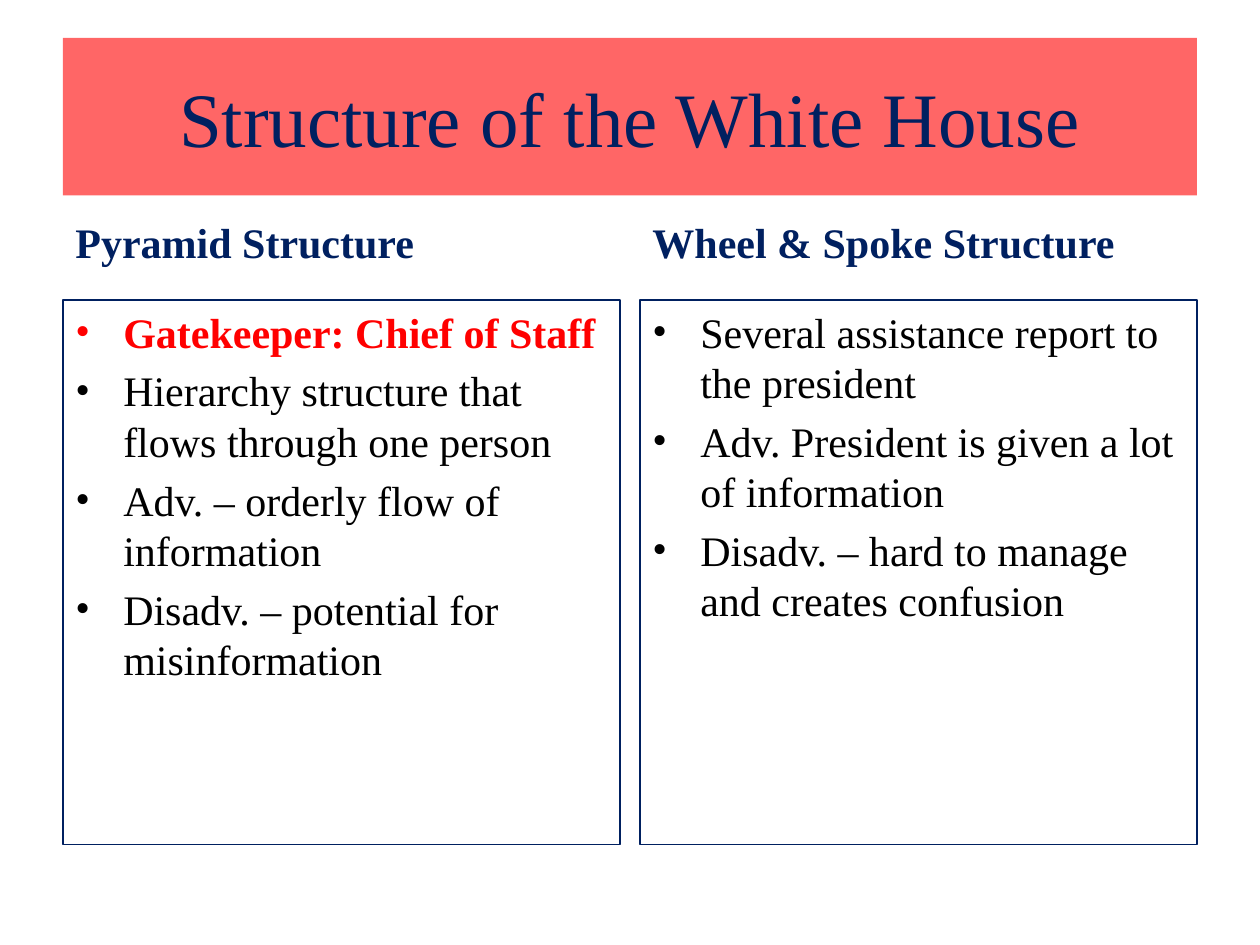
from lxml.etree import SubElement
from pptx import Presentation
from pptx.dml.color import RGBColor
from pptx.enum.shapes import MSO_SHAPE
from pptx.enum.text import MSO_ANCHOR, PP_ALIGN
from pptx.oxml.ns import qn
from pptx.util import Inches, Pt

FONT = "Times New Roman"
NAVY, RED, BLACK, WHITE = "002060", "FF0000", "000000", "FFFFFF"
MARGIN, GUTTER = 0.5, 0.16
HEADING = {"size": Pt(24), "bold": True, "color": NAVY}
POINT = {"size": Pt(24), "bold": False, "color": BLACK}
KEY_POINT = POINT | {"bold": True, "color": RED}

COLUMNS = [
    ("Pyramid Structure", [
        ("Gatekeeper: Chief of Staff", KEY_POINT),
        ("Hierarchy structure that flows through one person", POINT),
        ("Adv. – orderly flow of information", POINT),
        ("Disadv. – potential for misinformation", POINT),
    ]),
    ("Wheel & Spoke Structure", [
        ("Several assistance report to the president", POINT),
        ("Adv. President is given a lot of information", POINT),
        ("Disadv. – hard to manage and creates confusion", POINT),
    ]),
]


def rgb(value):
    return RGBColor.from_string(value)


def add_panel(slide, box, fill, anchor, border=None):
    panel = slide.shapes.add_shape(MSO_SHAPE.RECTANGLE, *map(Inches, box))
    panel.shadow.inherit = False
    panel.fill.solid()
    panel.fill.fore_color.rgb = rgb(fill)
    if border:
        panel.line.color.rgb = rgb(border)
        panel.line.width = Pt(0.75)
    else:
        panel.line.fill.background()
    panel.text_frame.word_wrap = True
    panel.text_frame.vertical_anchor = anchor
    return panel


def add_bullet(paragraph):
    properties = paragraph._p.get_or_add_pPr()
    properties.set("marL", str(Inches(0.38)))
    properties.set("indent", str(-Inches(0.38)))
    SubElement(properties, qn("a:buFont"), typeface=FONT)
    SubElement(properties, qn("a:buChar"), char="•")


def write(paragraph, text, style, align=PP_ALIGN.LEFT):
    paragraph.alignment = align
    run = paragraph.add_run()
    run.text = text
    run.font.name = FONT
    for name, value in style.items():
        if name == "color":
            run.font.color.rgb = rgb(value)
        else:
            setattr(run.font, name, value)


def add_title(slide, box, text):
    banner = add_panel(slide, box, RED, MSO_ANCHOR.MIDDLE)
    color = banner.fill._xPr.find(qn("a:solidFill")).find(qn("a:srgbClr"))
    SubElement(color, qn("a:alpha"), val="60000")
    write(banner.text_frame.paragraphs[0], text,
          {"size": Pt(44), "color": NAVY}, PP_ALIGN.CENTER)


def add_column(slide, box, heading, points):
    left, top, width, height = box
    heading_height, body_offset = 0.49, 0.7
    label = add_panel(slide, (left, top, width, heading_height), WHITE, MSO_ANCHOR.BOTTOM)
    write(label.text_frame.paragraphs[0], heading, HEADING)

    body_box = (left, top + body_offset, width, height - body_offset)
    frame = add_panel(slide, body_box, WHITE, MSO_ANCHOR.TOP, NAVY).text_frame
    for index, (text, style) in enumerate(points):
        paragraph = frame.add_paragraph() if index else frame.paragraphs[0]
        if index:
            paragraph.space_before = Pt(4.8)
        add_bullet(paragraph)
        write(paragraph, text, style)


def main():
    presentation = Presentation()
    presentation.slide_width, presentation.slide_height = Inches(10), Inches(7.5)
    slide = presentation.slides.add_slide(presentation.slide_layouts[6])
    content_width = 10 - 2 * MARGIN
    add_title(slide, (MARGIN, 0.3, content_width, 1.25), "Structure of the White House")
    column_width = (content_width - GUTTER) / len(COLUMNS)
    for index, (heading, points) in enumerate(COLUMNS):
        left = MARGIN + index * (column_width + GUTTER)
        add_column(slide, (left, 1.68, column_width, 5.02), heading, points)
    presentation.save("out.pptx")


if __name__ == "__main__":
    main()
